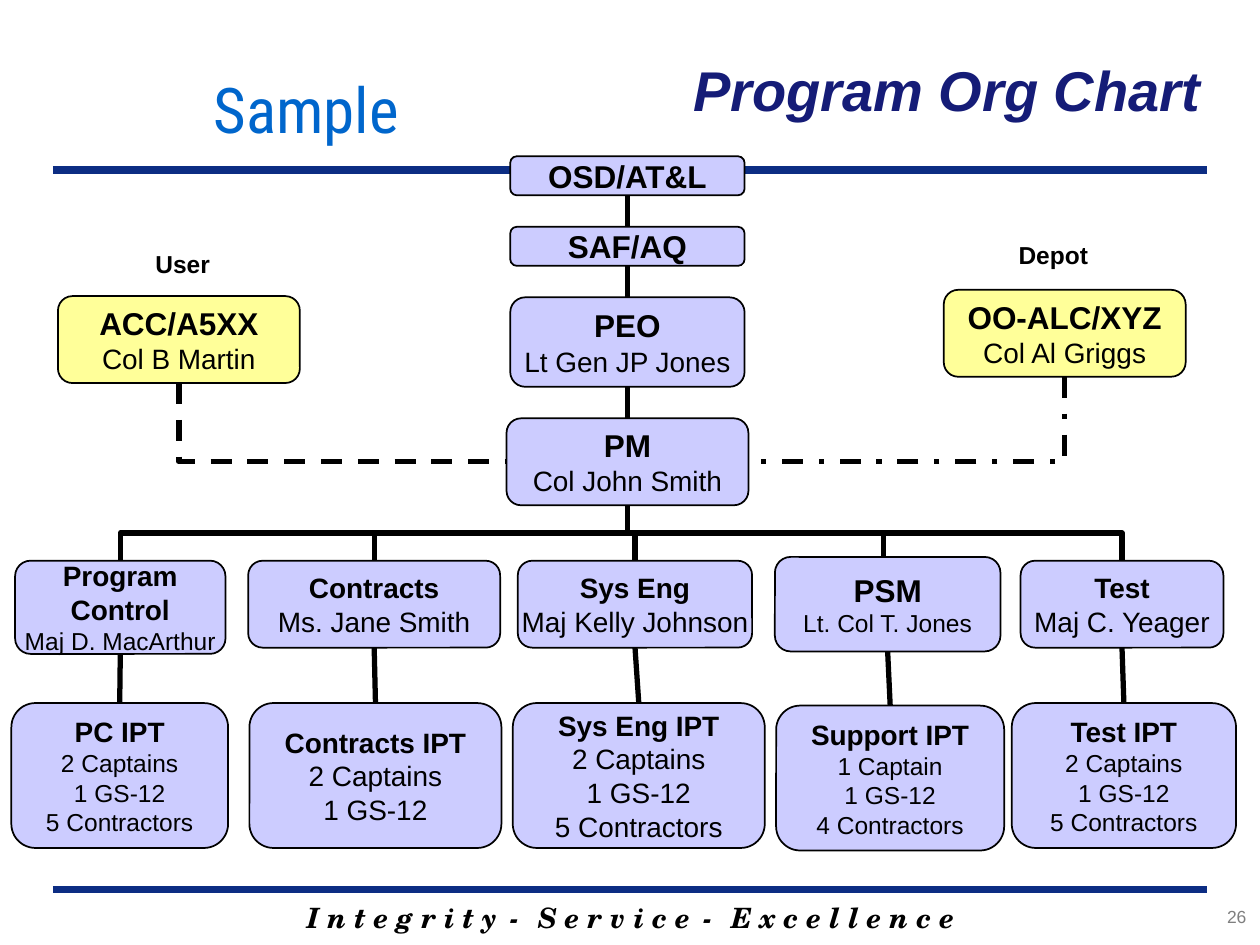
import dataclasses
import lxml.etree
import pptx
import pptx.dml.color
import pptx.enum.dml
import pptx.enum.shapes
import pptx.enum.text
import pptx.oxml.ns
import pptx.util

COLS, ROWS = 100, 75
WIDE, HIGH = pptx.util.Inches(10), pptx.util.Inches(7.5)
ALIGN = pptx.enum.text.PP_ALIGN
DASH = pptx.enum.dml.MSO_LINE
KIND = pptx.enum.shapes.MSO_CONNECTOR


@dataclasses.dataclass(frozen=True)
class Theme:
    font: str = "Arial"
    motto: str = "TeX Gyre Schola"
    label: str = "Roboto Condensed"
    ink: str = "000000"
    navy: str = "151C77"
    rule: str = "0C2D83"
    blue: str = "0066CC"
    edge: str = "99CCFF"
    gray: str = "7F7F7F"
    lilac: str = "CCCCFF"
    yellow: str = "FFFF99"
    title: int = 32
    stamp: int = 36
    large: int = 18
    mid: int = 16
    small: int = 14
    tiny: int = 10


LOOK = Theme()


def col(n):
    return round(WIDE * n / COLS)


def row(n):
    return round(HIGH * n / ROWS)


def place(at):
    x, y, w, h = at
    return col(x), row(y), col(w), row(h)


def tint(code):
    return pptx.dml.color.RGBColor.from_string(code)


def style(run, size, color=LOOK.ink, bold=False, slant=False, face=LOOK.font):
    font = run.font
    font.name, font.size = face, pptx.util.Pt(size)
    font.bold, font.italic = bold, slant
    font.color.rgb = tint(color)


def add_text(slide, at, text, size, align=ALIGN.CENTER, wrap=False, mid=False, **look):
    frame = slide.shapes.add_textbox(*place(at)).text_frame
    frame.text = text
    frame.word_wrap = wrap
    if mid:
        frame.vertical_anchor = pptx.enum.text.MSO_ANCHOR.MIDDLE
    line = frame.paragraphs[0]
    line.alignment = align
    style(line.runs[0], size, **look)
    return line


def add_box(slide, at, head, body=(), sizes=(LOOK.large, LOOK.mid), fill=LOOK.lilac):
    kind = pptx.enum.shapes.MSO_SHAPE.ROUNDED_RECTANGLE
    box = slide.shapes.add_shape(kind, *place(at))
    box.shadow.inherit = False
    box.fill.solid()
    box.fill.fore_color.rgb = tint(fill)
    box.line.color.rgb = tint(LOOK.ink)
    box.line.width = pptx.util.Pt(1)
    frame = box.text_frame
    frame.text = "\n".join([*head, *body])
    frame.word_wrap = False
    frame.vertical_anchor = pptx.enum.text.MSO_ANCHOR.MIDDLE
    for i, line in enumerate(frame.paragraphs):
        top = i < len(head)
        line.alignment = ALIGN.CENTER
        style(line.runs[0], sizes[0] if top else sizes[1], bold=top)
    return box


def add_line(slide, start, end, color=LOOK.ink, width=3, kind=KIND.STRAIGHT):
    line = slide.shapes.add_connector(kind, *start, *end)
    line.line.color.rgb = tint(color)
    line.line.width = pptx.util.Pt(width)
    props = line._element.spPr
    lxml.etree.SubElement(props, pptx.oxml.ns.qn("a:effectLst"))
    return line


def join(slide, upper, lower):
    line = add_line(slide, (0, 0), (0, 0))
    line.begin_connect(upper, 2)
    line.end_connect(lower, 0)


def add_bend(slide, start, end, dash=None):
    (x1, y1), (x2, y2) = start, end
    wide, high = abs(x2 - x1), y2 - y1
    left, top = (x1 + x2 - high) // 2, (y1 + y2 - wide) // 2
    line = add_line(slide, (left, top), (left + high, top + wide), kind=KIND.ELBOW)
    turn = line._element.spPr.xfrm
    if x2 < x1:
        turn.set("rot", "5400000")
    else:
        turn.set("rot", "16200000")
        turn.set("flipH", "1")
    if dash:
        line.line.dash_style = dash
        shape = line._element.spPr.find(pptx.oxml.ns.qn("a:prstGeom"))
        shape.set("prst", "bentConnector2")


def foot(box):
    return box.left + box.width // 2, box.top + box.height


def crown(box):
    return box.left + box.width // 2, box.top


def add_motto(slide):
    look = dict(bold=True, slant=True, face=LOOK.motto)
    first, *rest = ["I n t e g r i t y", "S e r v i c e", "E x c e l l e n c e"]
    line = add_text(slide, (14.2, 71, 71.7, 3.7), first, LOOK.mid, wrap=True, **look)
    for word in rest:
        for text in (" - ", word):
            run = line.add_run()
            run.text = text
            style(run, LOOK.mid, **look)
            if text != word:
                run._r.get_or_add_rPr().set("spc", "300")


def add_frame(slide):
    add_motto(slide)
    for y in (70.6, 13.5):
        add_line(slide, (col(4.2), row(y)), (col(95.8), row(y)), LOOK.rule, 4.5)
    add_text(slide, (18.2, 0.8, 78.1, 12.5), "Program Org Chart", LOOK.title,
             ALIGN.RIGHT, wrap=True, mid=True, color=LOOK.navy, bold=True, slant=True)
    add_text(slide, (87.4, 71.4, 12.5, 3.3), "26", LOOK.tiny,
             ALIGN.RIGHT, wrap=True, color=LOOK.gray)
    stamp = add_text(slide, (13.3, 5.1, 22, 6.2), "Sample", LOOK.stamp,
                     color=LOOK.blue, face=LOOK.label)
    qn = pptx.oxml.ns.qn
    edge = lxml.etree.Element(qn("a:ln"), w=str(pptx.util.Pt(1.5)))
    fill = lxml.etree.SubElement(edge, qn("a:solidFill"))
    lxml.etree.SubElement(fill, qn("a:srgbClr"), val=LOOK.edge)
    stamp.runs[0]._r.get_or_add_rPr().insert(0, edge)


def add_chain(slide):
    ranks = [
        ((40.5, 12.4, 18.6, 3.1), "OSD/AT&L", []),
        ((40.5, 18, 18.6, 3.1), "SAF/AQ", []),
        ((40.5, 23.6, 18.6, 7.1), "PEO", ["Lt Gen JP Jones"]),
        ((40.2, 33.2, 19.2, 6.9), "PM", ["Col John Smith"]),
    ]
    chain = [add_box(slide, at, [head], body) for at, head, body in ranks]
    for upper, lower in zip(chain, chain[1:]):
        join(slide, upper, lower)
    return chain[-1]


def add_sides(slide, boss):
    sides = [
        ((4.6, 23.5, 19.2, 6.9), "ACC/A5XX", "Col B Martin",
         (9.5, 19.3, 10, 3.3), "User", boss.left, DASH.DASH),
        ((74.9, 23, 19.2, 6.9), "OO-ALC/XYZ", "Col Al Griggs",
         (78.6, 18.6, 10, 3.3), "Depot", boss.left + boss.width, DASH.DASH_DOT),
    ]
    for at, head, name, spot, label, goal, dash in sides:
        box = add_box(slide, at, [head], [name], fill=LOOK.yellow)
        add_bend(slide, foot(box), (goal, boss.top + boss.height // 2), dash)
        add_text(slide, spot, label, LOOK.small, bold=True)


def add_teams(slide, boss):
    big, mid, low = LOOK.large, LOOK.mid, LOOK.small
    staff = ["2 Captains", "1 GS-12", "5 Contractors"]
    teams = [
        ((1.2, 44.5, 16.7, 7.4), ["Program", "Control"], "Maj D. MacArthur", (mid, low),
         (0.9, 55.8, 17.2, 11.5), "PC IPT", staff, low),
        ((19.7, 44.5, 20, 6.9), ["Contracts"], "Ms. Jane Smith", (mid, mid),
         (19.8, 55.8, 20, 11.5), "Contracts IPT", staff[:2], mid),
        ((41.1, 44.5, 18.6, 6.9), ["Sys Eng"], "Maj Kelly Johnson", (mid, mid),
         (40.7, 55.8, 20, 11.5), "Sys Eng IPT", staff, mid),
        ((61.5, 44.2, 17.9, 7.5), ["PSM"], "Lt. Col T. Jones", (big, low),
         (61.6, 56, 18.1, 11.5), "Support IPT",
         ["1 Captain", "1 GS-12", "4 Contractors"], low),
        ((81, 44.5, 16.1, 6.9), ["Test"], "Maj C. Yeager", (mid, mid),
         (80.3, 55.8, 17.8, 11.5), "Test IPT", staff, low),
    ]
    for at, head, name, sizes, spot, unit, crew, size in teams:
        lead = add_box(slide, at, head, [name], sizes)
        team = add_box(slide, spot, [unit], crew, (mid, size))
        join(slide, lead, team)
        if head == ["PSM"]:
            add_line(slide, (col(70.1), row(42.5)), (col(70.1), lead.top))
        else:
            add_bend(slide, foot(boss), crown(lead))


def main():
    deck = pptx.Presentation()
    deck.slide_width, deck.slide_height = WIDE, HIGH
    slide = deck.slides.add_slide(deck.slide_layouts[6])
    add_frame(slide)
    boss = add_chain(slide)
    add_sides(slide, boss)
    add_teams(slide, boss)
    deck.save("out.pptx")


if __name__ == "__main__":
    main()
